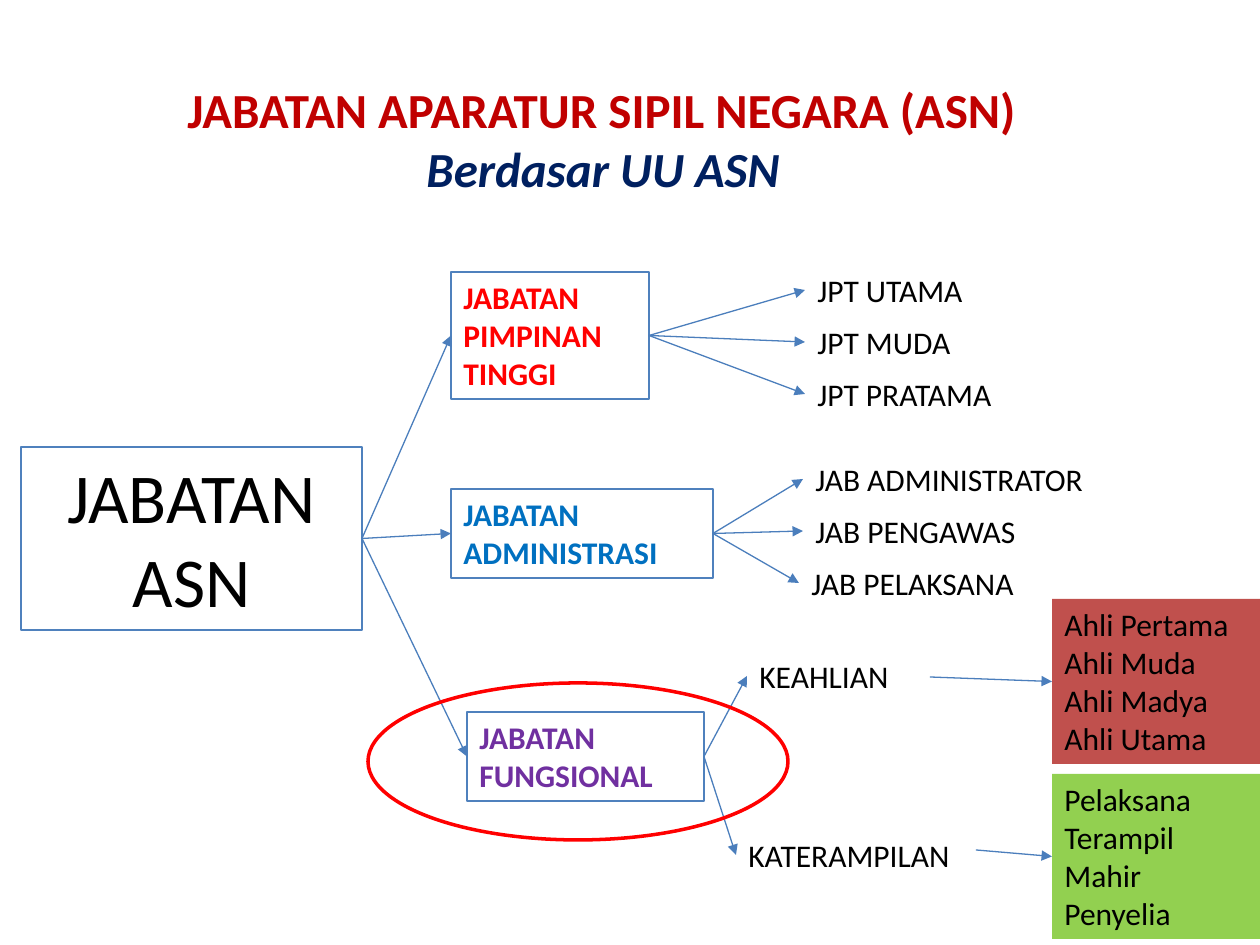
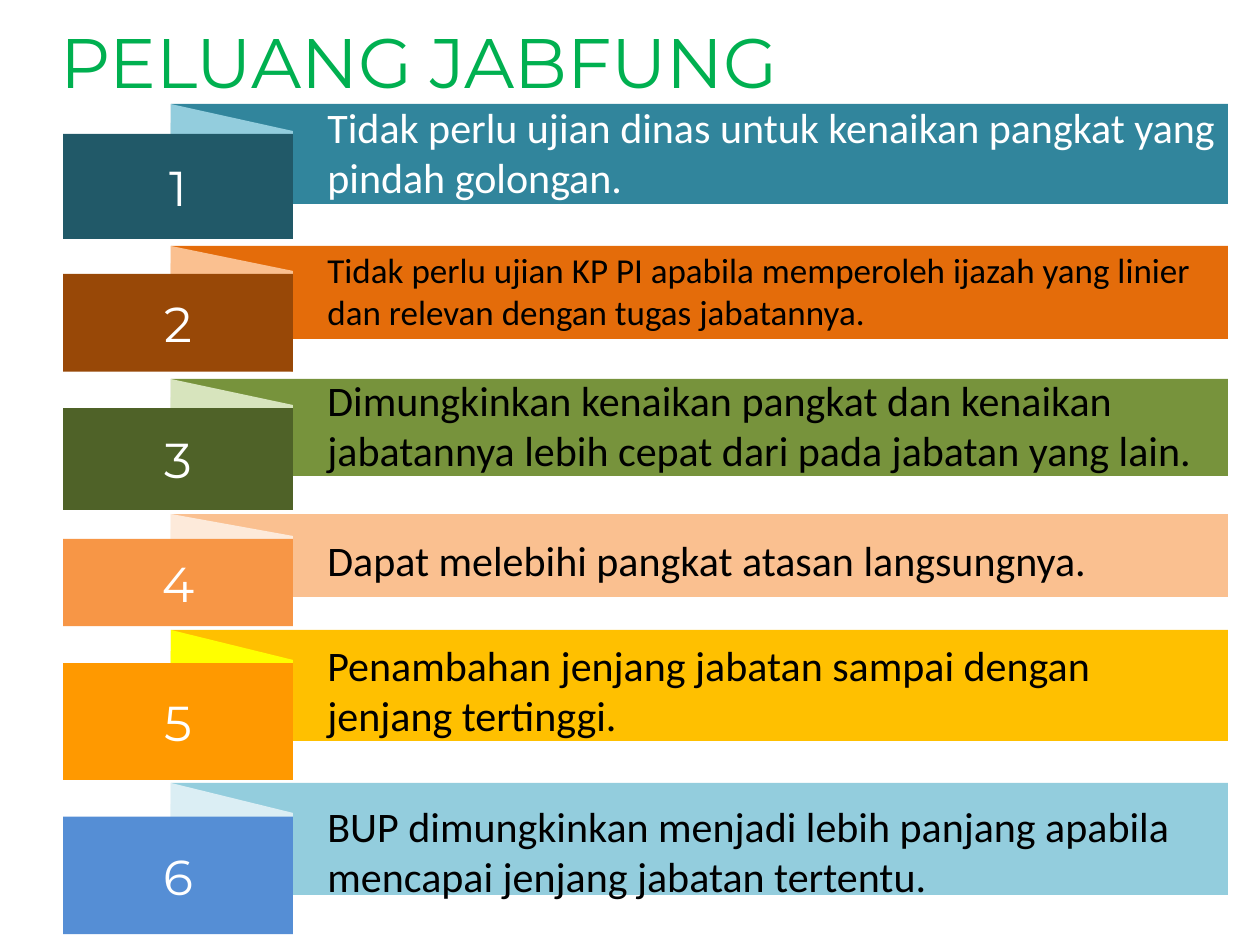
from lxml.etree import SubElement
from pptx import Presentation
from pptx.dml.color import RGBColor
from pptx.enum.shapes import MSO_CONNECTOR, MSO_SHAPE
from pptx.enum.text import MSO_ANCHOR, MSO_AUTO_SIZE, PP_ALIGN
from pptx.oxml.ns import qn
from pptx.util import Emu, Inches, Pt

PX = 914400 / 126
BLACK, WHITE = "000000", "FFFFFF"
BOX_LINE, ARROW_LINE = "4F81BD", "4B7EBC"
BODY_FONT, DISPLAY_FONT = "Calibri", "Montserrat"
LEAF_HEIGHT = 50
TAB_LEFT, FOLD_LEFT, FOLD_RIGHT, BAND_RIGHT = 63, 171, 293, 1228

ROOT = (21, 447, 341, 183)
BRANCHES = [
    ("JABATAN PIMPINAN TINGGI", (451, 272, 198, 127), "FF0000",
     [("JPT UTAMA", 805, 265, 199), ("JPT MUDA", 805, 317, 184), ("JPT PRATAMA", 805, 369, 239)]),
    ("JABATAN ADMINISTRASI", (451, 489, 262, 89), "0070C0",
     [("JAB ADMINISTRATOR", 803, 454, 352), ("JAB PENGAWAS", 803, 506, 273),
      ("JAB PELAKSANA", 799, 558, 282)]),
    ("JABATAN FUNGSIONAL", (467, 712, 237, 89), "7030A0",
     [("KEAHLIAN", 747, 651, 183), ("KATERAMPILAN", 736, 830, 268)]),
]
GRADES = [
    ("Ahli Pertama\nAhli Muda\nAhli Madya\nAhli Utama", (1052, 599, 208, 165), "C0504D", (930, 677)),
    ("Pelaksana\nTerampil\nMahir\nPenyelia", (1052, 774, 208, 165), "92D050", (976, 850)),
]
OPPORTUNITIES = [
    (104, 100, 95, ("31859C", "93CDDD", "215968"), 24, WHITE,
     "Tidak perlu ujian dinas untuk kenaikan pangkat yang pindah golongan."),
    (246, 93, 242, ("E46C0A", "FAC090", "984807"), 20, BLACK,
     "Tidak perlu ujian KP PI apabila memperoleh ijazah yang linier dan relevan dengan tugas jabatannya."),
    (379, 97, 368, ("77933C", "D7E4BD", "4F6228"), 24, BLACK,
     "Dimungkinkan kenaikan pangkat dan kenaikan jabatannya lebih cepat dari pada jabatan yang lain."),
    (514, 83, 528, ("FAC090", "FDEADA", "F79646"), 24, BLACK,
     "Dapat melebihi pangkat atasan langsungnya."),
    (630, 111, 633, ("FFC000", "FFFF00", "FF9900"), 24, BLACK,
     "Penambahan jenjang jabatan sampai dengan jenjang tertinggi."),
    (783, 112, 794, ("93CDDD", "DBEEF4", "558ED5"), 24, BLACK,
     "BUP dimungkinkan menjadi lebih panjang apabila mencapai jenjang jabatan tertentu."),
]


def px(*lengths):
    return [Emu(round(length * PX)) for length in lengths]


def rgb(color):
    return RGBColor.from_string(color)


def write(frame, text, size=18, color=BLACK, font=BODY_FONT, bold=False, italic=False,
          align=PP_ALIGN.LEFT, indented=False):
    for line in text.split("\n"):
        first = frame.paragraphs[0]
        paragraph = frame.add_paragraph() if first.runs else first
        paragraph.alignment = align
        if indented:
            paragraph.level = 1
            properties = paragraph._p.get_or_add_pPr()
            properties.set("marL", str(Inches(0.5)))
            properties.set("indent", "0")
        run = paragraph.add_run()
        run.text = line
        run.font.name = font
        run.font.size = Pt(size)
        run.font.bold = bold
        run.font.italic = italic
        run.font.color.rgb = rgb(color)


def prepare(frame, grow=True, anchor=MSO_ANCHOR.TOP):
    frame.word_wrap = True
    frame.auto_size = MSO_AUTO_SIZE.SHAPE_TO_FIT_TEXT if grow else MSO_AUTO_SIZE.NONE
    frame.vertical_anchor = anchor
    return frame


def paint(shape, fill=None, line=None, width=0.75):
    shape.shadow.inherit = False
    if fill:
        shape.fill.solid()
        shape.fill.fore_color.rgb = rgb(fill)
    else:
        shape.fill.background()
    if line:
        shape.line.color.rgb = rgb(line)
        shape.line.width = Pt(width)
    else:
        shape.line.fill.background()
    return shape


def add_panel(shapes, place, kind=MSO_SHAPE.RECTANGLE, **style):
    return paint(shapes.add_shape(kind, *px(*place)), **style)


def add_box(shapes, place, text, fill=None, line=None, **style):
    box = add_panel(shapes, place, fill=fill, line=line)
    write(prepare(box.text_frame), text, **style)


def add_text(shapes, place, text, grow=True, **style):
    frame = prepare(shapes.add_textbox(*px(*place)).text_frame, grow)
    write(frame, text, **style)
    return frame


def add_arrow(shapes, start, end):
    arrow = shapes.add_connector(MSO_CONNECTOR.STRAIGHT, *px(*start, *end))
    arrow.line.color.rgb = rgb(ARROW_LINE)
    arrow.line.width = Pt(0.75)
    SubElement(arrow.line._get_or_add_ln(), qn("a:tailEnd"), type="triangle")
    SubElement(arrow._element.spPr, qn("a:effectLst"))


def left_middle(place):
    left, top, width, height = place
    return left, top + height / 2


def right_middle(place):
    left, top, width, height = place
    return left + width, top + height / 2


def add_opportunity(slide, number, row):
    top, height, text_top, (band, fold, tab), size, color, text = row
    shapes = slide.shapes.add_group_shape().shapes
    tab_top, tab_height = top + 0.3 * height, 1.05 * height
    add_panel(shapes, (FOLD_LEFT, top, BAND_RIGHT - FOLD_LEFT, height), fill=band)
    outline = shapes.build_freeform(FOLD_LEFT, top, scale=PX)
    outline.add_line_segments([
        (FOLD_RIGHT, top + 0.27 * height),
        (FOLD_RIGHT, tab_top + tab_height),
        (FOLD_LEFT - 1, top + 0.97 * height),
    ], close=True)
    paint(outline.convert_to_shape(), fill=fold)
    label = add_panel(shapes, (TAB_LEFT, tab_top, FOLD_RIGHT - TAB_LEFT, tab_height), fill=tab)
    write(prepare(label.text_frame, False, MSO_ANCHOR.MIDDLE), str(number),
          size=28, color=WHITE, font=DISPLAY_FONT, align=PP_ALIGN.CENTER)
    add_text(shapes, (252, text_top, 977, 115), text, size=size, color=color, indented=True)


def build_positions(slide):
    shapes = slide.shapes
    add_box(shapes, ROOT, "JABATAN ASN", line=BOX_LINE, size=40, align=PP_ALIGN.CENTER)
    for text, place, color, leaves in BRANCHES:
        add_box(shapes, place, text, line=BOX_LINE, color=color, bold=True)
        add_arrow(shapes, right_middle(ROOT), left_middle(place))
        for leaf, left, top, width in leaves:
            leaf_place = (left, top, width, LEAF_HEIGHT)
            add_text(shapes, leaf_place, leaf)
            add_arrow(shapes, right_middle(place), left_middle(leaf_place))
    for text, place, fill, start in GRADES:
        add_box(shapes, place, text, fill=fill)
        add_arrow(shapes, start, left_middle(place))
    title = add_text(shapes, (175, 73, 856, 131), "JABATAN APARATUR SIPIL NEGARA (ASN)",
                     size=28, color="C00000", bold=True)
    write(title, "Berdasar UU ASN", size=28, color="002060", bold=True, italic=True,
          align=PP_ALIGN.CENTER)
    add_panel(shapes, (368, 683, 420, 157), MSO_SHAPE.OVAL, line="FF0000", width=2)


def build_opportunities(slide):
    add_text(slide.shapes, (48, 12, 1086, 91), "PELUANG JABFUNG", grow=False,
             size=40, color="00B050", font=DISPLAY_FONT)
    for number, row in enumerate(OPPORTUNITIES, 1):
        add_opportunity(slide, number, row)


def main():
    presentation = Presentation()
    presentation.slide_width, presentation.slide_height = px(1260, 945)
    for build in (build_positions, build_opportunities):
        build(presentation.slides.add_slide(presentation.slide_layouts[6]))
    presentation.save("out.pptx")


if __name__ == "__main__":
    main()
